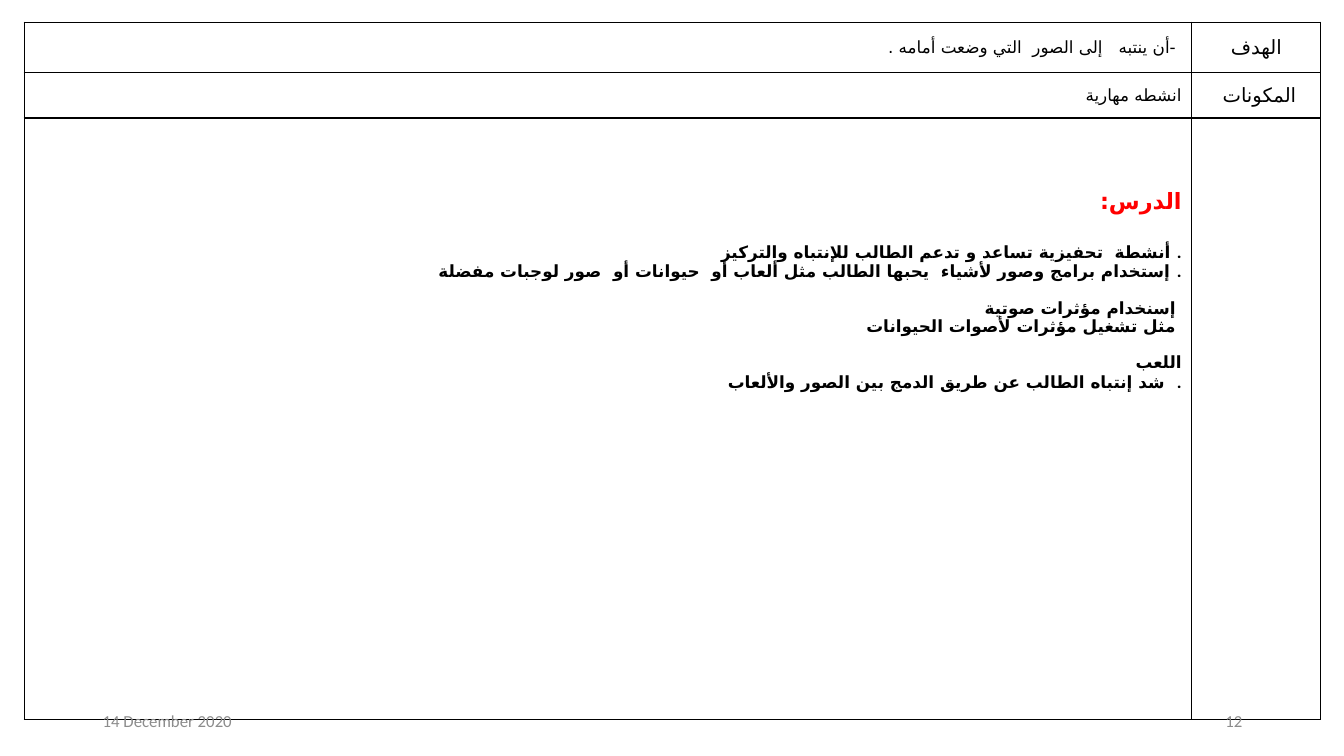
from lxml import etree
from pptx import Presentation
from pptx.dml.color import RGBColor
from pptx.enum import text
from pptx.oxml import ns
from pptx.util import Inches, Pt

COLORS = {"ink": "000000", "heading": "FF0000", "footer": "8C8C8C"}
ARABIC_FONT = "DejaVu Sans"
ALIGN = text.PP_ALIGN


def write_paragraph(paragraph, wording, align, size, color="ink", font="Calibri",
                    bold=False, rtl=False, space_before=0, line_spacing=1.0):
    layout = {"alignment": align, "space_before": Pt(space_before),
              "line_spacing": line_spacing}
    for name, value in layout.items():
        setattr(paragraph, name, value)
    if rtl:
        paragraph._p.get_or_add_pPr().set("rtl", "1")
    run = paragraph.add_run()
    run.text = wording
    formats = {"size": Pt(size), "bold": bold, "name": font}
    for name, value in formats.items():
        setattr(run.font, name, value)
    run.font.color.rgb = RGBColor.from_string(COLORS[color])
    # Arabic letters take the complex-script font
    etree.SubElement(run._r.get_or_add_rPr(), ns.qn("a:cs"), typeface=ARABIC_FONT)


def add_borders(cell):
    properties = cell._tc.get_or_add_tcPr()
    for position, side in enumerate(("lnL", "lnR", "lnT", "lnB")):
        line = etree.Element(ns.qn(f"a:{side}"), w=str(Pt(1)))
        fill = etree.SubElement(line, ns.qn("a:solidFill"))
        etree.SubElement(fill, ns.qn("a:srgbClr"), val=COLORS["ink"])
        properties.insert(position, line)


presentation = Presentation()
presentation.slide_width = Inches(13.33)
presentation.slide_height = Inches(7.5)
slide = presentation.slides.add_slide(presentation.slide_layouts[6])

# Lesson plan table
column_widths = [11.58, 1.28]
row_heights = [0.5, 0.45, 5.97]
table = slide.shapes.add_table(
    len(row_heights), len(column_widths), Inches(0.24), Inches(0.22),
    Inches(sum(column_widths)), Inches(sum(row_heights))).table
table.first_row = table.horz_banding = False
for column, width in zip(table.columns, column_widths):
    column.width = Inches(width)
for row, height in zip(table.rows, row_heights):
    row.height = Inches(height)
for cell in table.iter_cells():
    cell.fill.background()
    cell.vertical_anchor = text.MSO_ANCHOR.MIDDLE
    add_borders(cell)

summary_rows = [
    (" -أن ينتبه   إلى الصور  التي وضعت أمامه .", "الهدف"),
    ("انشطه مهارية", "المكونات "),
]
for index, (content, label) in enumerate(summary_rows):
    write_paragraph(table.cell(index, 0).text_frame.paragraphs[0], content,
                    ALIGN.RIGHT, 12, rtl=True)
    write_paragraph(table.cell(index, 1).text_frame.paragraphs[0], label,
                    ALIGN.CENTER, 14, rtl=True)

# Lesson: heading, then lines with space before in points and line spacing
lesson_cell = table.cell(2, 0)
lesson_cell.vertical_anchor = text.MSO_ANCHOR.TOP
lesson_cell.margin_top = Inches(0.7)
lesson = lesson_cell.text_frame
write_paragraph(lesson.paragraphs[0], "الدرس:", ALIGN.RIGHT, 16, "heading",
                "Roboto", bold=True, rtl=True)
lesson_lines = [
    ("أنشطة  تحفيزية تساعد و تدعم الطالب للإنتباه والتركيز .", 20, 1.0),
    ("إستخدام برامج وصور لأشياء  يحبها الطالب مثل ألعاب أو  حيوانات أو  صور لوجبات مفضلة .", 0, 1.0),
    ("إسنخدام مؤثرات صوتية ", 12.5, 1.0),
    ("مثل تشغيل مؤثرات لأصوات الحيوانات ", 0, 0.87),
    ("اللعب", 12, 1.0),
    ("شد إنتباه الطالب عن طريق الدمج بين الصور والألعاب  .", 0, 1.0),
]
for wording, space_before, line_spacing in lesson_lines:
    write_paragraph(lesson.add_paragraph(), wording, ALIGN.RIGHT, 12,
                    font="Roboto", bold=True, space_before=space_before,
                    line_spacing=line_spacing)

# Footer: date and slide number
for left, wording, align in [(0.92, "14 December 2020", ALIGN.LEFT),
                             (9.42, "12", ALIGN.RIGHT)]:
    frame = slide.shapes.add_textbox(
        Inches(left), Inches(6.95), Inches(3), Inches(0.4)).text_frame
    frame.word_wrap = True
    frame.vertical_anchor = text.MSO_ANCHOR.MIDDLE
    write_paragraph(frame.paragraphs[0], wording, align, 12, "footer")

presentation.save("out.pptx")
